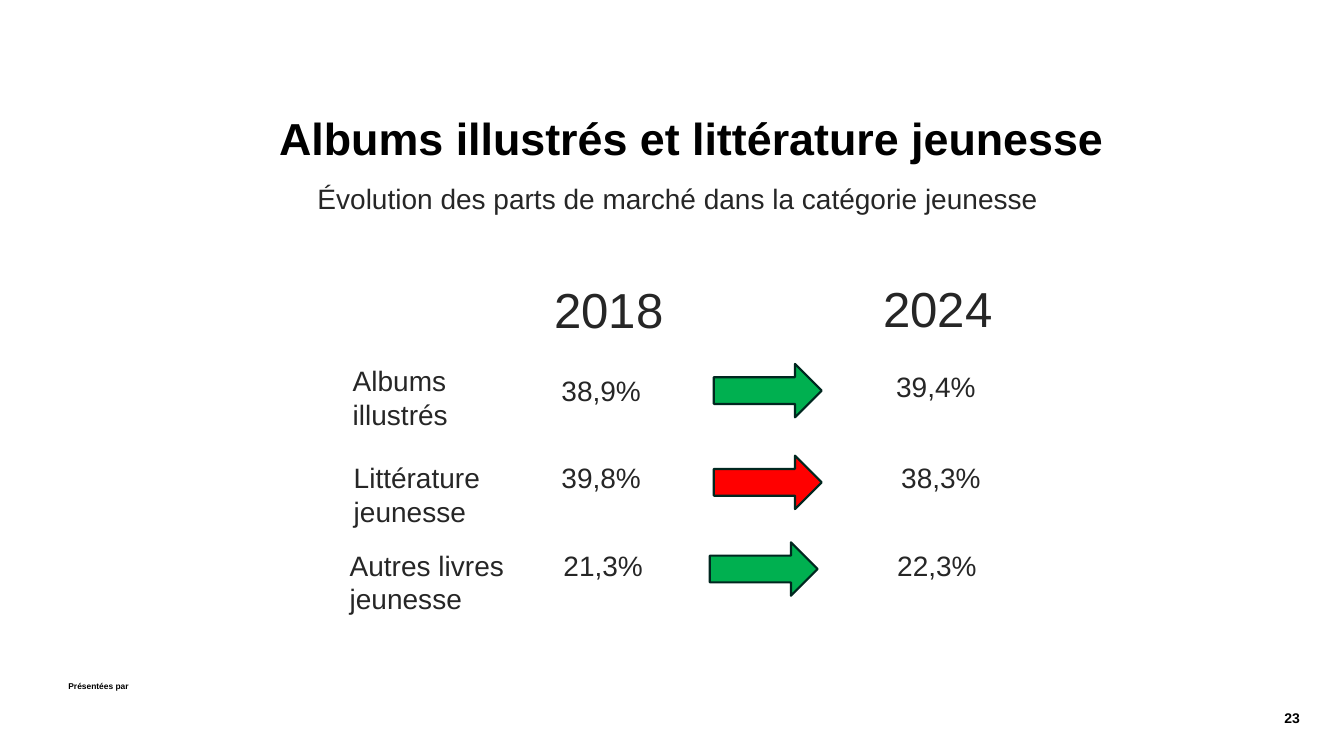
from dataclasses import dataclass

from pptx import Presentation
from pptx.dml.color import RGBColor
from pptx.enum.shapes import MSO_SHAPE as Shape
from pptx.enum.text import MSO_ANCHOR as Anchor, PP_ALIGN as Align
from pptx.util import Inches, Pt

BLACK = RGBColor(0x00, 0x00, 0x00)
GREY = RGBColor(0x26, 0x26, 0x26)
GREEN = RGBColor(0x00, 0xB0, 0x50)
RED = RGBColor(0xFF, 0x00, 0x00)
EDGE = RGBColor(0x00, 0x27, 0x1F)

deck = Presentation()
deck.slide_width = Inches(13.33)
deck.slide_height = Inches(7.5)
slide = deck.slides.add_slide(deck.slide_layouts[6])

# The grid has 100 columns and 100 rows.
COL = deck.slide_width / 100
ROW = deck.slide_height / 100


@dataclass(frozen=True)
class Box:
    """A place on the grid, in columns and rows."""
    left: float
    top: float
    width: float
    height: float

    def lengths(self) -> tuple[int, int, int, int]:
        return (round(self.left * COL), round(self.top * ROW),
                round(self.width * COL), round(self.height * ROW))


@dataclass(frozen=True)
class Cell:
    text: str
    left: float
    top: float


@dataclass(frozen=True)
class Trend:
    """One category: its label, both shares and the arrow between them."""
    label: Cell
    space: tuple[float, float]
    old: Cell
    new: Cell
    arrow: tuple[float, float]
    fill: RGBColor


TRENDS = [
    Trend(Cell("Albums illustrés", 25.51, 47.47), (12.53, 24),
          Cell("38,9%", 41.04, 48.8), Cell("39,4%", 65.94, 48.27),
          (53.11, 48.13), GREEN),
    Trend(Cell("Littérature jeunesse", 25.58, 60.27), (15.45, 11.2),
          Cell("39,8%", 41.04, 60.27), Cell("38,3%", 66.32, 60.27),
          (53.11, 60.27), RED),
    Trend(Cell("Autres livres jeunesse", 25.28, 71.87), (15.45, 11.2),
          Cell("21,3%", 41.19, 71.87), Cell("22,3%", 66.02, 71.87),
          (52.81, 71.73), GREEN),
]
YEARS = [Cell("2018", 40.51, 36.27), Cell("2024", 64.97, 36.13)]


def write(text: str, box: Box, *, size: float = 20, color: RGBColor = GREY,
          bold: bool = False, align: Align = Align.LEFT,
          space: float = 1.0, wrap: bool = True) -> None:
    frame = slide.shapes.add_textbox(*box.lengths()).text_frame
    frame.word_wrap = wrap
    frame.vertical_anchor = Anchor.TOP
    para = frame.paragraphs[0]
    para.alignment = align
    para.line_spacing = space
    run = para.add_run()
    run.text = text
    run.font.name = "Arial"
    run.font.size = Pt(size)
    run.font.bold = bold
    run.font.color.rgb = color


def point(box: Box, fill: RGBColor) -> None:
    """Draw an arrow to the right."""
    arrow = slide.shapes.add_shape(Shape.RIGHT_ARROW, *box.lengths())
    arrow.shadow.inherit = False
    arrow.fill.solid()
    arrow.fill.fore_color.rgb = fill
    arrow.line.color.rgb = EDGE
    arrow.line.width = Pt(1.5)


def draw(trend: Trend) -> None:
    write(trend.label.text,
          Box(trend.label.left, trend.label.top, *trend.space))
    for share in (trend.old, trend.new):
        write(share.text, Box(share.left, share.top, 8.93, 5.87))
    point(Box(*trend.arrow, 8.03, 7.07), trend.fill)


def main() -> None:
    write("Présentées par", Box(4.35, 89.47, 6.08, 2.67),
          size=6, color=BLACK, bold=True, wrap=False)
    write("23", Box(80.5, 93.2, 16.95, 3.6),
          size=10, color=BLACK, bold=True, align=Align.RIGHT)
    write("Albums illustrés et littérature jeunesse",
          Box(20.03, 14.8, 79.97, 8.53),
          size=32, color=BLACK, bold=True, space=0.9)
    write("Évolution des parts de marché dans la catégorie jeunesse",
          Box(22.88, 23.33, 64.82, 11.2))
    for year in YEARS:
        write(year.text, Box(year.left, year.top, 9.98, 11.2), size=35.1)
    for trend in TRENDS:
        draw(trend)
    deck.save("out.pptx")


if __name__ == "__main__":
    main()
